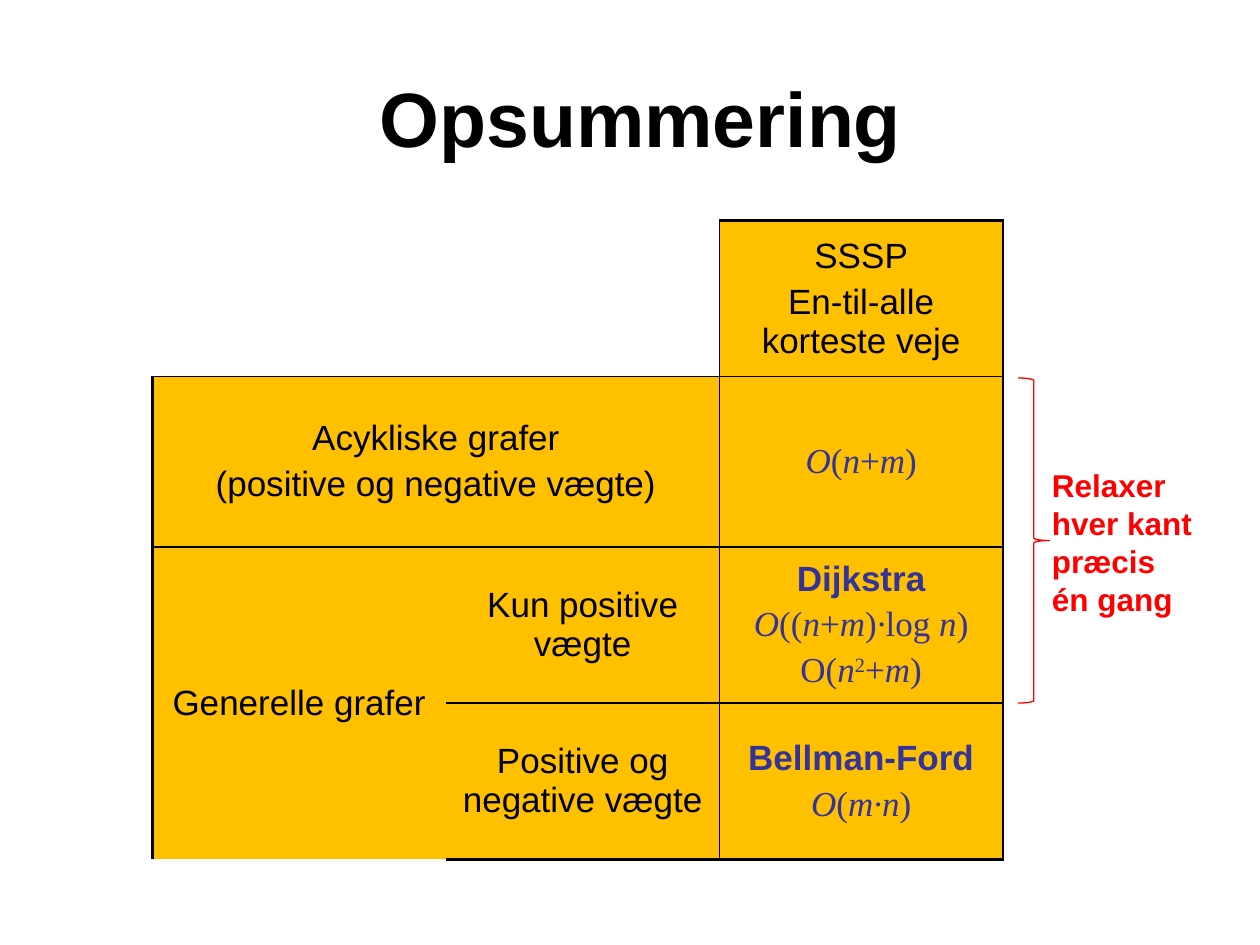
from pptx import Presentation
from pptx.dml.color import RGBColor
from pptx.enum import shapes, text
from pptx.oxml import parse_xml
from pptx.oxml.ns import nsdecls
from pptx.util import Inches, Pt

# Content: a run is (text, style); b bold, i italic maths, m upright maths,
# s superscript maths, p plain
HEAD = "Opsummering"
NOTE = "Relaxer hver kant præcis én gang"
CELLS = {
    (0, 2): [[("SSSP", "p")], [("En-til-alle korteste veje", "p")]],
    (1, 0): [[("Acykliske grafer", "p")],
             [("(positive og negative vægte)", "p")]],
    (1, 2): [[("O", "i"), ("(", "m"), ("n", "i"), ("+", "m"), ("m", "i"),
              (")", "m")]],
    (2, 0): [[("Generelle grafer", "p")]],
    (2, 1): [[("Kun positive vægte", "p")]],
    (2, 2): [[("Dijkstra", "b")],
             [("O", "i"), ("((", "m"), ("n", "i"), ("+", "m"), ("m", "i"),
              (")", "m"), ("·", "i"), ("log ", "m"), ("n", "i"), (")", "m")],
             [("O(", "m"), ("n", "i"), ("2", "s"), ("+", "m"), ("m", "i"),
              (")", "m")]],
    (3, 1): [[("Positive og negative vægte", "p")]],
    (3, 2): [[("Bellman-Ford", "b")],
             [("O", "i"), ("(", "m"), ("m·n", "i"), (")", "m")]],
}
SPANS = [((0, 0), (0, 1)), ((1, 0), (1, 1)), ((2, 0), (3, 0))]
COLS = [2.33, 2.17, 2.25]
ROWS = [1.24, 1.35, 1.24, 1.24]
LEFT, TOP = 1.21, 1.75

THEME = {
    "sans": "Arial", "serif": "Times New Roman",
    "ink": "000000", "blue": "333399", "red": "FF0000", "gold": "FFC000",
    "title": 44, "body": 20, "note": 18, "thin": 1, "thick": 2.25,
}


def rgb(name):
    return RGBColor.from_string(THEME[name])


def style(font, size, color, face="sans", bold=False):
    font.name, font.size = THEME[face], Pt(THEME[size])
    font.color.rgb, font.bold = rgb(color), bold


def write(cell, paras):
    cell.vertical_anchor = text.MSO_ANCHOR.MIDDLE
    frame = cell.text_frame
    for n, runs in enumerate(paras):
        para = frame.add_paragraph() if n else frame.paragraphs[0]
        para.alignment = text.PP_ALIGN.CENTER
        para.space_before = Pt(THEME["body"] * 0.2)
        for words, kind in runs:
            run = para.add_run()
            run.text = words
            style(run.font, "body", "ink" if kind == "p" else "blue",
                  "sans" if kind in "pb" else "serif", kind == "b")
            run.font.italic = kind == "i"
            if kind == "s":
                run.font._element.set("baseline", "30000")


def edges(row, col):
    """Line width of each side; 0 means no line."""
    thin, thick = THEME["thin"], THEME["thick"]
    corner = row == 0 and col < 2
    left = 0 if corner else thick if col == 0 else thin
    top = 0 if corner else thick if row == 0 else thin
    if col == 1 and row > 0:
        left = 0
    if (row, col) == (3, 0):
        top = 0
    right = 0 if col == 0 else thin
    low = 0 if (row, col) == (2, 0) else thick if row == 3 else thin
    return {"lnL": left, "lnR": right, "lnT": top, "lnB": low}


def border(cell, sides):
    props = cell._tc.get_or_add_tcPr()
    for n, (tag, width) in enumerate(sides.items()):
        paint = (f'<a:solidFill><a:srgbClr val="{THEME["ink"]}"/></a:solidFill>'
                 if width else "<a:noFill/>")
        props.insert(n, parse_xml(
            f'<a:{tag} {nsdecls("a")} w="{int(Pt(width))}">{paint}</a:{tag}>'))


deck = Presentation()
deck.slide_width, deck.slide_height = Inches(10), Inches(7.5)
slide = deck.slides.add_slide(deck.slide_layouts[5])

# Title
title = slide.shapes.title
title.left, title.top = Inches(0.5), Inches(0.3)
title.width, title.height = Inches(9.17), Inches(1.25)
title.text_frame.text = HEAD
title.text_frame.vertical_anchor = text.MSO_ANCHOR.MIDDLE
title.text_frame.paragraphs[0].alignment = text.PP_ALIGN.CENTER
style(title.text_frame.paragraphs[0].runs[0].font, "title", "ink", bold=True)

# Table
grid = slide.shapes.add_table(
    len(ROWS), len(COLS), Inches(LEFT), Inches(TOP),
    Inches(sum(COLS)), Inches(sum(ROWS))).table
grid.first_row = grid.horz_banding = False
for col, width in zip(grid.columns, COLS):
    col.width = Inches(width)
for row, height in zip(grid.rows, ROWS):
    row.height = Inches(height)
for first, last in SPANS:
    grid.cell(*first).merge(grid.cell(*last))
for r in range(len(ROWS)):
    for c in range(len(COLS)):
        cell = grid.cell(r, c)
        if r == 0 and c < 2:
            cell.fill.background()
        else:
            cell.fill.solid()
            cell.fill.fore_color.rgb = rgb("gold")
        border(cell, edges(r, c))
        if (r, c) in CELLS:
            write(cell, CELLS[r, c])

# Brace beside the two middle rows
brace = slide.shapes.add_shape(
    shapes.MSO_SHAPE.RIGHT_BRACE, Inches(8.08), Inches(TOP + 1.25),
    Inches(0.25), Inches(2.58))
brace.shadow.inherit = False
brace.adjustments[0] = 0.08
brace.fill.background()
brace.line.color.rgb, brace.line.width = rgb("red"), Pt(0.75)

# Note
note = slide.shapes.add_textbox(
    Inches(8.25), Inches(3.65), Inches(1.33), Inches(1.31))
note.text_frame.word_wrap = True
note.text_frame.text = NOTE
style(note.text_frame.paragraphs[0].runs[0].font, "note", "red", bold=True)

deck.save("out.pptx")
